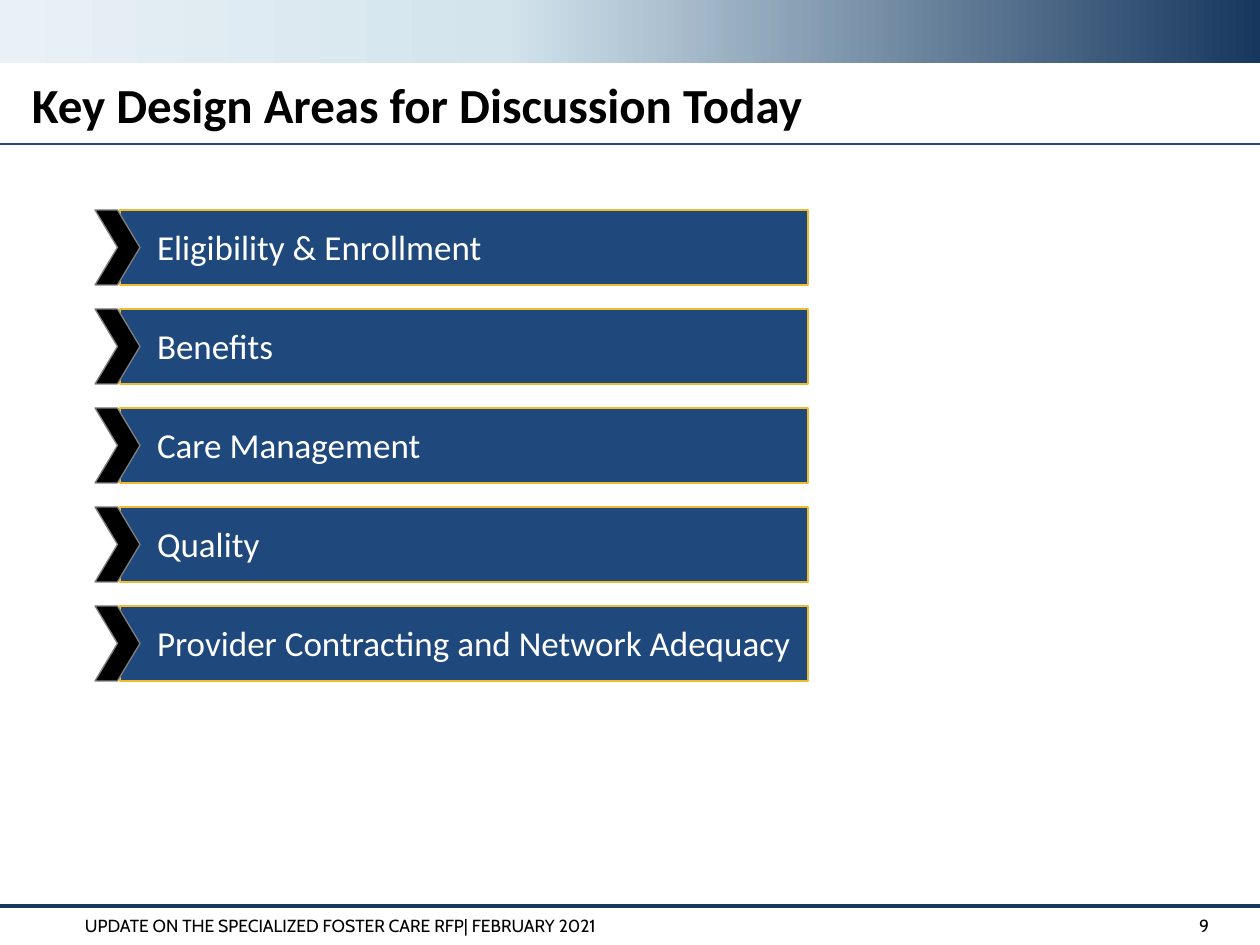
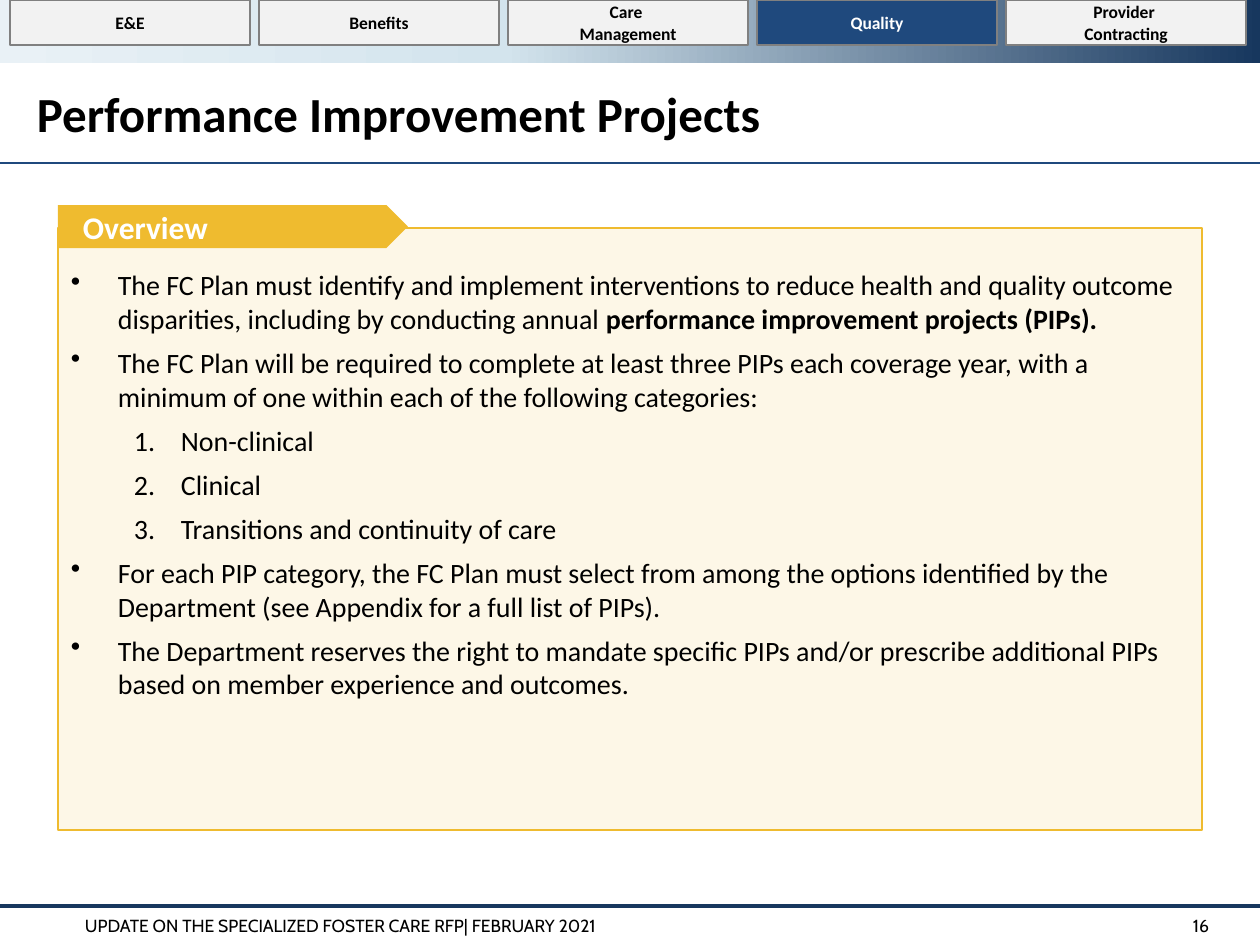
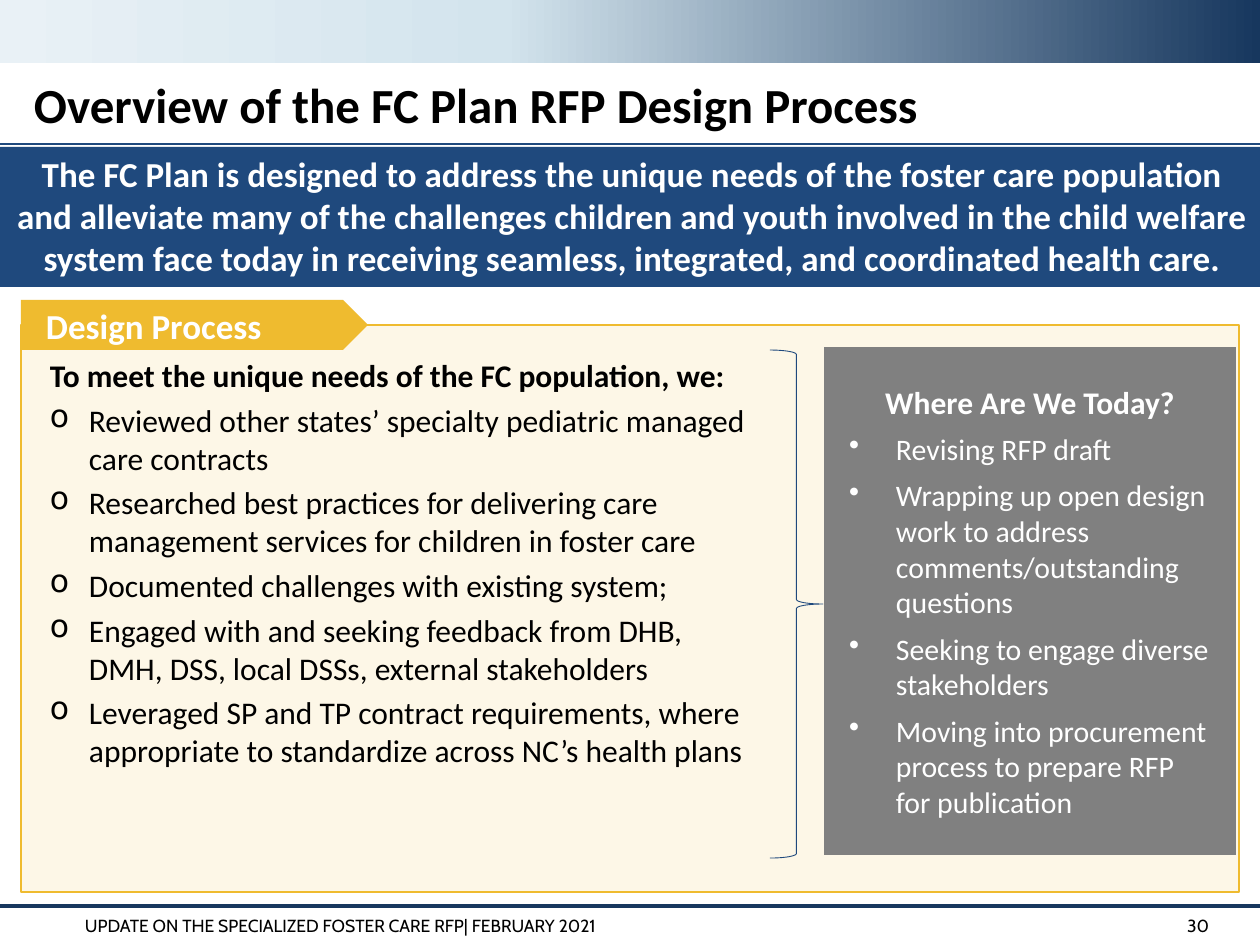
import typing

import lxml.etree
import pptx
import pptx.dml.color
import pptx.enum.shapes
import pptx.enum.text
import pptx.oxml.ns
import pptx.util

SHAPE = pptx.enum.shapes.MSO_SHAPE
ALIGN = pptx.enum.text.PP_ALIGN
ANCHOR = pptx.enum.text.MSO_ANCHOR
Pt = pptx.util.Pt
qn = pptx.oxml.ns.qn

WIDE, HIGH = 1260, 945
NAVY, BLUE, GOLD, CREAM = "17375E", "1F497D", "EFBB2F", "FDF7E7"
GRAY, PALE, BLACK, WHITE = "808080", "F2F2F2", "000000", "FFFFFF"
FOOTER = "UPDATE ON THE SPECIALIZED FOSTER CARE RFP| FEBRUARY 2021"


class Box(typing.NamedTuple):
    left: int
    top: int
    width: int
    height: int


class Line(typing.NamedTuple):
    text: str
    mark: str = ""
    level: int = 0
    tail: str = ""
    size: int = 0
    bold: bool = False


class Page(typing.NamedTuple):
    title: str
    number: int
    spot: Box
    rule: int
    space: float = 1.0


AREAS = [
    "Eligibility & Enrollment",
    "Benefits",
    "Care Management",
    "Quality",
    "Provider Contracting and Network Adequacy",
]

TABS = [
    ["E&E"],
    ["Benefits"],
    ["Care ", "Management"],
    ["Quality"],
    ["Provider ", "Contracting"],
]

PROJECTS = [
    Line(
        "The FC Plan must identify and implement interventions to reduce health and "
        "quality outcome disparities, including by conducting annual ",
        "•",
        tail="performance improvement projects (PIPs).",
    ),
    Line(
        "The FC Plan will be required to complete at least three PIPs each coverage "
        "year, with a minimum of one within each of the following categories:",
        "•",
    ),
    Line("Non-clinical", "1.", 1),
    Line("Clinical", "1.", 1),
    Line("Transitions and continuity of care", "1.", 1),
    Line(
        "For each PIP category, the FC Plan must select from among the options "
        "identified by the Department (see Appendix for a full list of PIPs).",
        "•",
    ),
    Line(
        "The Department reserves the right to mandate specific PIPs and/or prescribe "
        "additional PIPs based on member experience and outcomes.",
        "•",
    ),
]

MISSION = (
    "The FC Plan is designed to address the unique needs of the foster care population "
    "and alleviate many of the challenges children and youth involved in the child "
    "welfare system face today in receiving seamless, integrated, and coordinated "
    "health care."
)

STEPS = [
    Line("To meet the unique needs of the FC population, we:", bold=True),
    Line("Reviewed other states’ specialty pediatric managed care contracts", "o"),
    Line(
        "Researched best practices for delivering care management services for "
        "children in foster care",
        "o",
    ),
    Line("Documented challenges with existing system;", "o"),
    Line(
        "Engaged with and seeking feedback from DHB, DMH, DSS, local DSSs, external "
        "stakeholders",
        "o",
    ),
    Line(
        "Leveraged SP and TP contract requirements, where appropriate to standardize "
        "across NC’s health plans",
        "o",
    ),
]

STATUS = [
    Line("Revising RFP draft", "•"),
    Line(
        "Wrapping up open design work to address comments/outstanding questions", "•"
    ),
    Line("Seeking to engage diverse stakeholders", "•"),
    Line("Moving into procurement process to prepare RFP for publication", "•"),
]


def px(count: int) -> int:
    return pptx.util.Emu(round(count * 914400 / 126))


def hue(code: str):
    return pptx.dml.color.RGBColor.from_string(code)


def bullet(para, line: Line, hang: int) -> None:
    props = para._p.get_or_add_pPr()
    props.set("marL", str(px(hang + 63 * line.level)))
    props.set("indent", str(-px(hang)))
    if line.mark == "1.":
        lxml.etree.SubElement(props, qn("a:buAutoNum"), type="arabicPeriod")
    else:
        lxml.etree.SubElement(props, qn("a:buChar"), char=line.mark)


def write(
    shape,
    lines,
    size: int = 18,
    color: str = BLACK,
    bold: bool = False,
    font: str = "Calibri",
    align=ALIGN.LEFT,
    anchor=ANCHOR.TOP,
    after: int = 0,
    space: float = 1.0,
    hang: int = 47,
    inset: tuple = (13, 6, 13, 6),
) -> None:
    frame = shape.text_frame
    frame.word_wrap = True
    frame.vertical_anchor = anchor
    frame.margin_left, frame.margin_top, frame.margin_right, frame.margin_bottom = map(
        px, inset
    )
    rows = [lines] if isinstance(lines, str) else lines
    for index, row in enumerate(rows):
        line = Line(row) if isinstance(row, str) else row
        para = frame.add_paragraph() if index else frame.paragraphs[0]
        para.alignment = ALIGN.LEFT if line.mark else align
        para.level = line.level
        para.space_after = Pt(after)
        para.line_spacing = space
        if line.mark:
            bullet(para, line, hang)
        for words, heavy in ((line.text, bold or line.bold), (line.tail, True)):
            if words:
                run = para.add_run()
                run.text = words
                run.font.name = font
                run.font.size = Pt(line.size or size)
                run.font.bold = heavy
                run.font.color.rgb = hue(color)


def draw(
    slide, kind, box: Box, fill: str = "", edge: str = "", weight: float = 1
):
    shape = slide.shapes.add_shape(kind, *map(px, box))
    shape.shadow.inherit = False
    if fill:
        shape.fill.solid()
        shape.fill.fore_color.rgb = hue(fill)
    else:
        shape.fill.background()
    if edge:
        shape.line.color.rgb = hue(edge)
        shape.line.width = Pt(weight)
    else:
        shape.line.fill.background()
    return shape


def label(slide, box: Box, lines, **style) -> None:
    write(slide.shapes.add_textbox(*map(px, box)), lines, **style)


def rule(slide, top: int, color: str, weight: float) -> None:
    line = slide.shapes.add_connector(
        pptx.enum.shapes.MSO_CONNECTOR.STRAIGHT, 0, px(top), px(WIDE), px(top)
    )
    line.line.color.rgb = hue(color)
    line.line.width = Pt(weight)
    lxml.etree.SubElement(line._element.spPr, qn("a:effectLst"))


def band(slide) -> None:
    shape = draw(slide, SHAPE.RECTANGLE, Box(0, 0, WIDE, 63))
    shape.fill.gradient()
    shape.fill.gradient_angle = 180
    stops = shape._element.spPr.find(".//" + qn("a:gsLst"))
    stops.clear()
    for place, color in ((0, NAVY), (60, "D3E4ED"), (100, "E9F1F6")):
        stop = lxml.etree.SubElement(stops, qn("a:gs"), pos=str(place * 1000))
        lxml.etree.SubElement(stop, qn("a:srgbClr"), val=color)


def start(deck, page: Page):
    slide = deck.slides.add_slide(deck.slide_layouts[6])
    band(slide)
    rule(slide, 906, NAVY, 2.25)
    label(slide, page.spot, page.title, size=28, bold=True, space=page.space)
    rule(slide, page.rule, BLUE, 1.5)
    foot = dict(size=10, font="Cabin", anchor=ANCHOR.MIDDLE)
    label(slide, Box(72, 906, 1058, 39), FOOTER, **foot)
    label(slide, Box(1144, 906, 78, 39), str(page.number), align=ALIGN.RIGHT, **foot)
    return slide


def flag(slide, box: Box, words: str, size: int) -> None:
    shape = draw(slide, SHAPE.PENTAGON, box, GOLD)
    write(
        shape,
        words,
        size=size,
        color=WHITE,
        bold=True,
        anchor=ANCHOR.MIDDLE,
        inset=(25, 0, 25, 0),
    )


def areas(deck) -> None:
    slide = start(
        deck,
        Page("Key Design Areas for Discussion Today", 9, Box(19, 68, 1178, 79), 144),
    )
    for index, area in enumerate(AREAS):
        top = 210 + 99 * index
        bar = draw(slide, SHAPE.RECTANGLE, Box(120, top, 688, 75), BLUE, GOLD)
        write(
            bar,
            area,
            size=20,
            color=WHITE,
            anchor=ANCHOR.MIDDLE,
            inset=(37, 0, 0, 2),
        )
        draw(slide, SHAPE.CHEVRON, Box(95, top, 45, 75), BLACK, GRAY, 0)


def projects(deck) -> None:
    slide = start(
        deck,
        Page("Performance Improvement Projects", 16, Box(24, 84, 1236, 76), 163, 0.9),
    )
    panel = draw(slide, SHAPE.RECTANGLE, Box(58, 228, 1144, 602), CREAM, GOLD, 0.75)
    write(panel, PROJECTS, size=16, after=6, inset=(13, 40, 13, 0))
    flag(slide, Box(58, 205, 350, 43), "Overview", 18)
    for index, words in enumerate(TABS):
        live = words == ["Quality"]
        tab = draw(
            slide,
            SHAPE.RECTANGLE,
            Box(10 + 249 * index, 0, 240, 45),
            BLUE if live else PALE,
            GRAY,
            0,
        )
        write(
            tab,
            words,
            size=10,
            color=WHITE if live else BLACK,
            bold=True,
            align=ALIGN.CENTER,
            anchor=ANCHOR.MIDDLE,
        )


def process(deck) -> None:
    slide = start(
        deck,
        Page(
            "Overview of the FC Plan RFP Design Process", 30, Box(21, 68, 1178, 79), 144
        ),
    )
    banner = draw(slide, SHAPE.RECTANGLE, Box(0, 147, 1264, 140), BLUE)
    write(banner, MISSION, size=20, color=WHITE, bold=True, align=ALIGN.CENTER)
    draw(slide, SHAPE.RECTANGLE, Box(21, 325, 1218, 567), CREAM, GOLD)
    label(slide, Box(37, 350, 731, 430), STEPS, after=4, hang=39)
    flag(slide, Box(21, 300, 347, 50), "Design Process", 20)
    today = draw(slide, SHAPE.FLOWCHART_PROCESS, Box(824, 347, 412, 508), GRAY)
    write(
        today,
        [Line("Where Are We Today?", size=18, bold=True), *STATUS],
        size=17,
        color=WHITE,
        align=ALIGN.CENTER,
        anchor=ANCHOR.MIDDLE,
        after=6,
        inset=(25, 25, 25, 25),
    )
    draw(slide, SHAPE.RIGHT_BRACE, Box(770, 350, 53, 508), edge=BLUE, weight=0.5)


def main() -> None:
    deck = pptx.Presentation()
    deck.slide_width, deck.slide_height = px(WIDE), px(HIGH)
    areas(deck)
    projects(deck)
    process(deck)
    deck.save("out.pptx")


if __name__ == "__main__":
    main()
